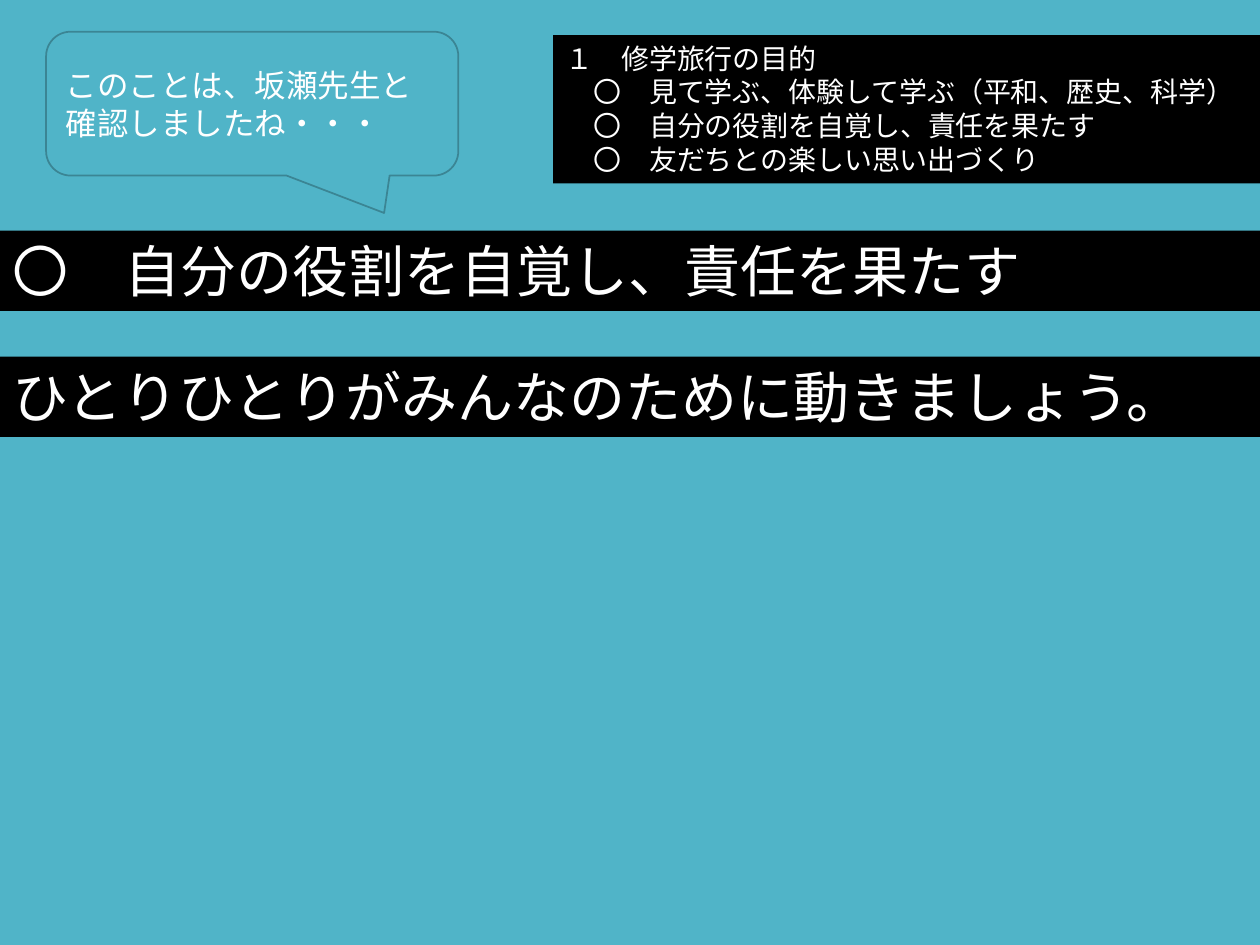
from dataclasses import dataclass

import pptx
import pptx.dml.color
import pptx.enum.shapes
import pptx.enum.text
import pptx.util
from pptx.util import Cm

SHAPES = pptx.enum.shapes.MSO_SHAPE
ANCHOR = pptx.enum.text.MSO_ANCHOR
BACKGROUND = "50B4C8"
BLACK = "000000"
WHITE = "FFFFFF"
OUTLINE = "3B8594"
PAGE_WIDTH = 25.4


@dataclass
class Panel:
    left: float
    top: float
    width: float
    height: float
    text: str
    size: int
    font: str = "Noto Sans CJK JP"
    fill: str = BLACK
    kind: SHAPES = SHAPES.RECTANGLE
    anchor: ANCHOR = ANCHOR.TOP
    grow: bool = True
    outline: str = ""
    adjustments: tuple[float, ...] = ()


PURPOSES = "\n".join([
    "１　修学旅行の目的",
    "　〇　見て学ぶ、体験して学ぶ（平和、歴史、科学）",
    "　〇　自分の役割を自覚し、責任を果たす",
    "　〇　友だちとの楽しい思い出づくり",
])

PANELS = [
    Panel(11.15, 0.71, PAGE_WIDTH - 11.15, 2.99, PURPOSES, 16),
    Panel(0, 4.65, PAGE_WIDTH, 1.62, "〇　自分の役割を自覚し、責任を果たす", 32),
    Panel(0, 7.19, PAGE_WIDTH, 1.62, "ひとりひとりがみんなのために動きましょう。", 32),
    Panel(0.93, 0.64, 8.31, 2.9, "このことは、坂瀬先生と確認しましたね・・・", 18,
          font="Calibri", fill=BACKGROUND, kind=SHAPES.ROUNDED_RECTANGULAR_CALLOUT,
          anchor=ANCHOR.MIDDLE, grow=False, outline=OUTLINE,
          adjustments=(0.32, 0.76, 0.17)),
]


def paint(target, color: str) -> None:
    target.solid()
    target.fore_color.rgb = pptx.dml.color.RGBColor.from_string(color)


def draw_panel(page, panel: Panel) -> None:
    box = page.shapes.add_shape(panel.kind, Cm(panel.left), Cm(panel.top),
                                Cm(panel.width), Cm(panel.height))
    box.shadow.inherit = False
    for index, value in enumerate(panel.adjustments):
        box.adjustments[index] = value
    paint(box.fill, panel.fill)
    if panel.outline:
        paint(box.line.fill, panel.outline)
        box.line.width = pptx.util.Pt(1)
    else:
        box.line.fill.background()

    frame = box.text_frame
    frame.text = panel.text
    frame.word_wrap = True
    frame.vertical_anchor = panel.anchor
    if panel.grow:
        frame.auto_size = pptx.enum.text.MSO_AUTO_SIZE.SHAPE_TO_FIT_TEXT
    for paragraph in frame.paragraphs:
        paragraph.alignment = pptx.enum.text.PP_ALIGN.LEFT
        for span in paragraph.runs:
            span.font.name = panel.font
            span.font.size = pptx.util.Pt(panel.size)
            paint(span.font.fill, WHITE)


def main() -> None:
    deck = pptx.Presentation()
    deck.slide_width = Cm(PAGE_WIDTH)
    deck.slide_height = Cm(19.05)
    page = deck.slides.add_slide(deck.slide_layouts[6])
    paint(page.background.fill, BACKGROUND)
    for panel in PANELS:
        draw_panel(page, panel)
    deck.save("out.pptx")


if __name__ == "__main__":
    main()
